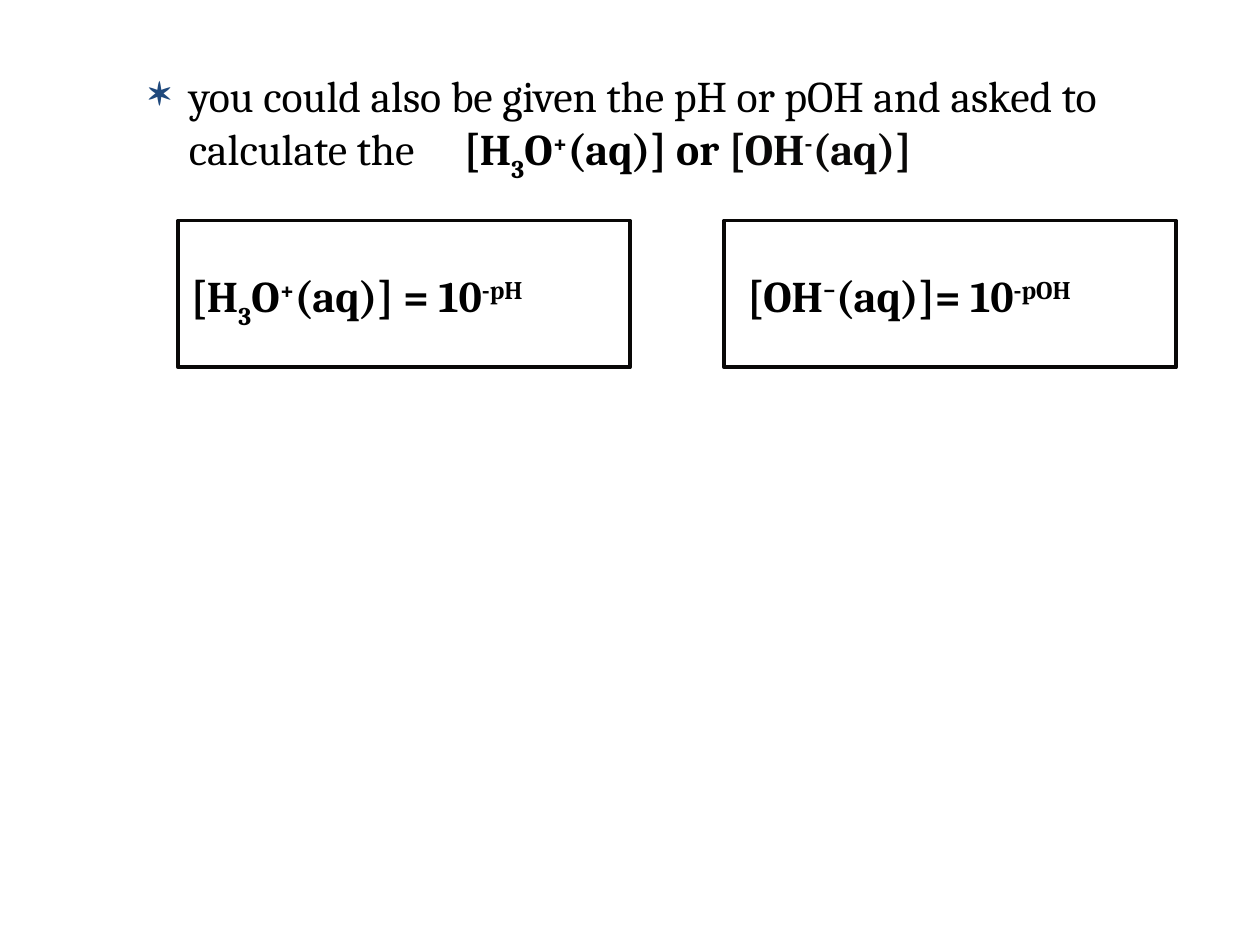
from pptx import Presentation, util as u
from pptx.dml.color import RGBColor
from pptx.enum import shapes, text as t
from pptx.oxml.ns import qn
from lxml import etree

PX = 7620  # EMU per px, 120 px to the inch
HUE = {"text": "000000", "ink": "090807", "mark": "1F497D"}
SUB, SUP = -30, 30


def rgb(name):
    return RGBColor.from_string(HUE[name])


def write(para, words, size=25, font="Cambria", hue="text", bold=True, base=0):
    run = para.add_run()
    run.text = words
    run.font.size = u.Pt(size)
    run.font.name = font
    run.font.bold = bold
    run.font.color.rgb = rgb(hue)
    if base:
        run.font._element.set("baseline", str(base * 1000))


class Deck:
    line = 2.25

    def __init__(self, wide, high):
        self.prs = Presentation()
        self.prs.slide_width, self.prs.slide_height = wide * PX, high * PX
        self.slide = self.prs.slides.add_slide(self.prs.slide_layouts[6])

    def frame(self, *at):
        box = self.slide.shapes.add_shape(
            shapes.MSO_SHAPE.RECTANGLE, *(n * PX for n in at))
        box.shadow.inherit = False
        box.fill.background()
        box.line.color.rgb = rgb("ink")
        box.line.width = u.Pt(self.line)

    def label(self, at, runs):
        box = self.slide.shapes.add_textbox(*(n * PX for n in at))
        box.text_frame.word_wrap = True
        box.text_frame.auto_size = t.MSO_AUTO_SIZE.SHAPE_TO_FIT_TEXT
        para = box.text_frame.paragraphs[0]
        for words, form in runs:
            write(para, words, **form)
        return para

    def bullet(self, at, words, sign, indent):
        para = self.label(at, [(words, {"bold": False})])
        props = para._p.get_or_add_pPr()
        props.set("marL", str(indent * PX))
        props.set("indent", str(-indent * PX))
        hue = etree.SubElement(props, qn("a:buClr"))
        etree.SubElement(hue, qn("a:srgbClr"), val=HUE["mark"])
        etree.SubElement(props, qn("a:buChar"), char=sign)


def main():
    deck = Deck(1200, 900)
    acid = [("[H", {}), ("3", {"base": SUB}), ("O", {}), ("+", {"base": SUP})]

    # Frames for the two formulas
    for left in (170, 690):
        deck.frame(left, 210, 430, 140)

    # Question, with its formulas set into the second line
    deck.bullet((130, 60, 1070, 112),
                "you could also be given the pH or pOH and asked to calculate the",
                "✶", 38)
    deck.label((430, 110, 539, 62), acid + [
        ("(aq)] or", {}), (" [OH", {"hue": "ink"}),
        ("-", {"hue": "ink", "base": SUP}), ("(aq)]", {"hue": "ink"})])

    # Formulas
    deck.label((170, 250, 500, 62), acid + [
        ("(aq)] = 10", {}), ("-pH", {"base": SUP})])
    deck.label((700, 250, 406, 62), [
        ("[OH", {}), ("−", {"font": "Calibri", "base": SUP}),
        ("(aq)]= 10", {}), ("-pOH", {"base": SUP})])

    deck.prs.save("out.pptx")


if __name__ == "__main__":
    main()
